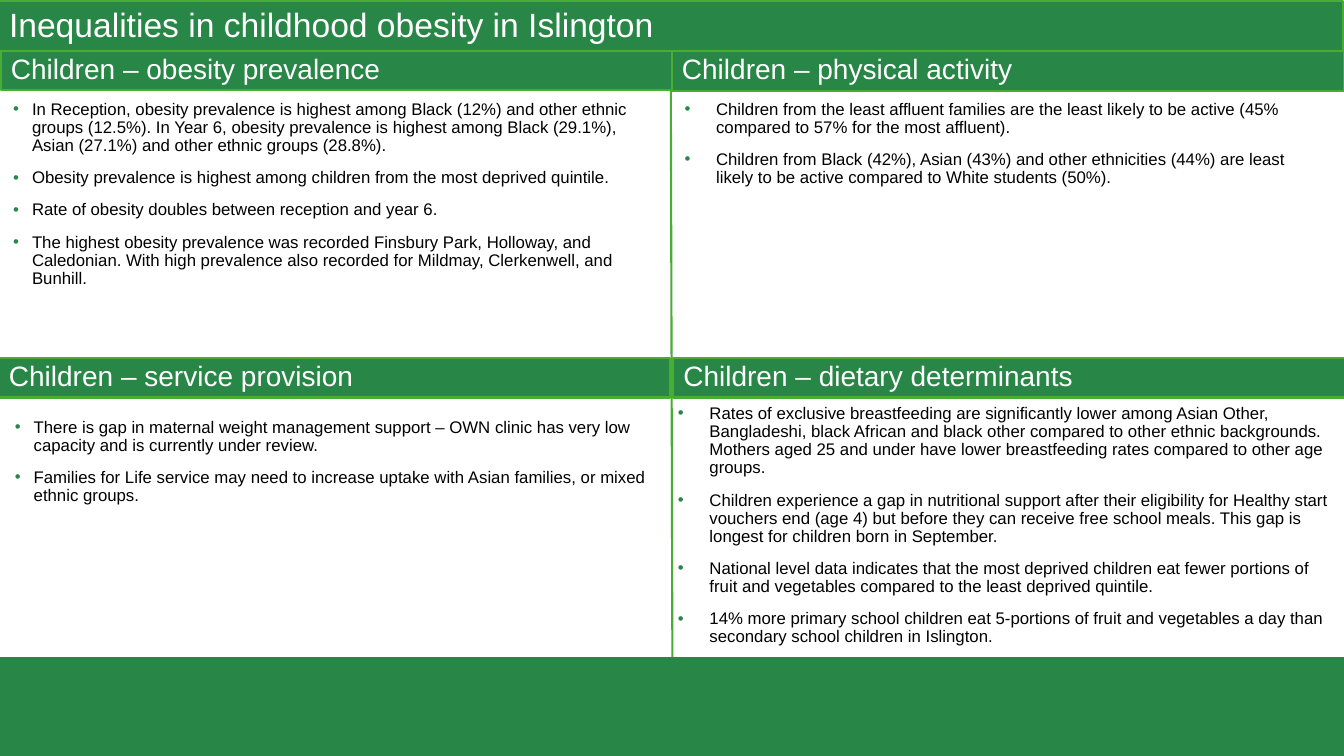
from lxml.etree import SubElement
from pptx import Presentation
from pptx.dml.color import RGBColor
from pptx.enum.shapes import MSO_CONNECTOR as CONN, MSO_SHAPE as SHAPE
from pptx.enum.text import MSO_ANCHOR as ANCHOR, MSO_AUTO_SIZE as AUTO, PP_ALIGN as ALIGN
from pptx.oxml.ns import qn
from pptx.util import Pt

GREEN, LIME, WHITE, BLACK = "288647", "49AC33", "FFFFFF", "000000"
W, H = 960, 540
TITLE = "Inequalities in childhood obesity in Islington"
PANELS = [
    ("Children – obesity prevalence", (0.7, 36, 479.5, 28.4), (9.4, 72, 458.6, 193.7), 13.5, [
        "In Reception, obesity prevalence is highest among Black (12%) and other ethnic groups (12.5%). In Year 6, obesity prevalence is highest among Black (29.1%), Asian (27.1%) and other ethnic groups (28.8%).",
        "Obesity prevalence is highest among children from the most deprived quintile.",
        "Rate of obesity doubles between reception and year 6.",
        "The highest obesity prevalence was recorded Finsbury Park, Holloway, and Caledonian. With high prevalence also recorded for Mildmay, Clerkenwell, and Bunhill.",
    ]),
    ("Children – physical activity", (480, 36, 480, 29.3), (489, 72, 458.6, 193.7), 22.5, [
        "Children from the least affluent families are the least likely to be active (45% compared to 57% for the most affluent).",
        "Children from Black (42%), Asian (43%) and other ethnicities (44%) are least likely to be active compared to White students (50%).",
    ]),
    ("Children – service provision", (-0.7, 255.6, 479.5, 28.4), (10.6, 299, 458.6, 193.7), 13.5, [
        "There is gap in maternal weight management support – OWN clinic has very low capacity and is currently under review.",
        "Families for Life service may need to increase uptake with Asian families, or mixed ethnic groups.",
    ]),
    ("Children – dietary determinants", (481, 255.6, 479.5, 28.4), (484.3, 289.3, 473, 193.7), 22.5, [
        "Rates of exclusive breastfeeding are significantly lower among Asian Other, Bangladeshi, black African and black other compared to other ethnic backgrounds. Mothers aged 25 and under have lower breastfeeding rates compared to other age groups.",
        "Children experience a gap in nutritional support after their eligibility for Healthy start vouchers end (age 4) but before they can receive free school meals. This gap is longest for children born in September.",
        "National level data indicates that the most deprived children eat fewer portions of fruit and vegetables compared to the least deprived quintile.",
        "14% more primary school children eat 5-portions of fruit and vegetables a day than secondary school children in Islington.",
    ]),
]


def rgb(value):
    return RGBColor.from_string(value)


def pts(box):
    return [Pt(v) for v in box]


def frame(sp, left=0):
    tf = sp.text_frame
    tf.word_wrap = True
    tf.auto_size = AUTO.NONE
    tf.margin_left = Pt(left)
    tf.margin_top = tf.margin_right = tf.margin_bottom = 0
    return tf


def style(p, size, color):
    p.alignment = ALIGN.LEFT
    p.line_spacing = 0.9
    for r in p.runs:
        r.font.name = "Arial"
        r.font.size = Pt(size)
        r.font.color.rgb = rgb(color)


def bullet(p, indent):
    pPr = p._p.get_or_add_pPr()
    pPr.set("marL", str(Pt(indent)))
    pPr.set("indent", str(-Pt(indent)))
    color = SubElement(pPr, qn("a:buClr"))
    SubElement(color, qn("a:srgbClr")).set("val", GREEN)
    SubElement(pPr, qn("a:buFont")).set("typeface", "Arial")
    SubElement(pPr, qn("a:buChar")).set("char", "•")


def band(sp, text, size):
    sp.fill.solid()
    sp.fill.fore_color.rgb = rgb(GREEN)
    sp.line.color.rgb = rgb(LIME)
    sp.line.width = Pt(1.5)
    tf = frame(sp, 7.2)
    tf.text = text
    tf.vertical_anchor = ANCHOR.MIDDLE
    style(tf.paragraphs[0], size, WHITE)


def bullets(s, box, indent, items):
    tf = frame(s.shapes.add_textbox(*pts(box)))
    for i, item in enumerate(items):
        p = tf.add_paragraph() if i else tf.paragraphs[0]
        p.text = item
        bullet(p, indent)
        style(p, 12, BLACK)
        p.space_before = Pt(10 if i else 0)


def main():
    prs = Presentation()
    prs.slide_width, prs.slide_height = Pt(W), Pt(H)
    s = prs.slides.add_slide(prs.slide_layouts[5])

    divider = s.shapes.add_connector(CONN.STRAIGHT, *pts((479, 1.5, 480.3, 469.4)))
    divider.line.color.rgb = rgb(LIME)
    divider.line.width = Pt(1.5)
    SubElement(divider._element.spPr, qn("a:effectLst"))

    footer = s.shapes.add_shape(SHAPE.RECTANGLE, *pts((0, 469.4, W, H - 469.4)))
    footer.shadow.inherit = False
    footer.fill.solid()
    footer.fill.fore_color.rgb = rgb(GREEN)
    footer.line.fill.background()

    for heading, head_box, body_box, indent, items in PANELS:
        head = s.shapes.add_shape(SHAPE.RECTANGLE, *pts(head_box))
        head.shadow.inherit = False
        band(head, heading, 20)
        bullets(s, body_box, indent, items)

    title = s.shapes.title
    title.left, title.top, title.width, title.height = pts((-0.7, 0.7, W, 36))
    band(title, TITLE, 24)
    s.shapes._spTree.append(title._element)
    prs.save("out.pptx")


if __name__ == "__main__":
    main()
